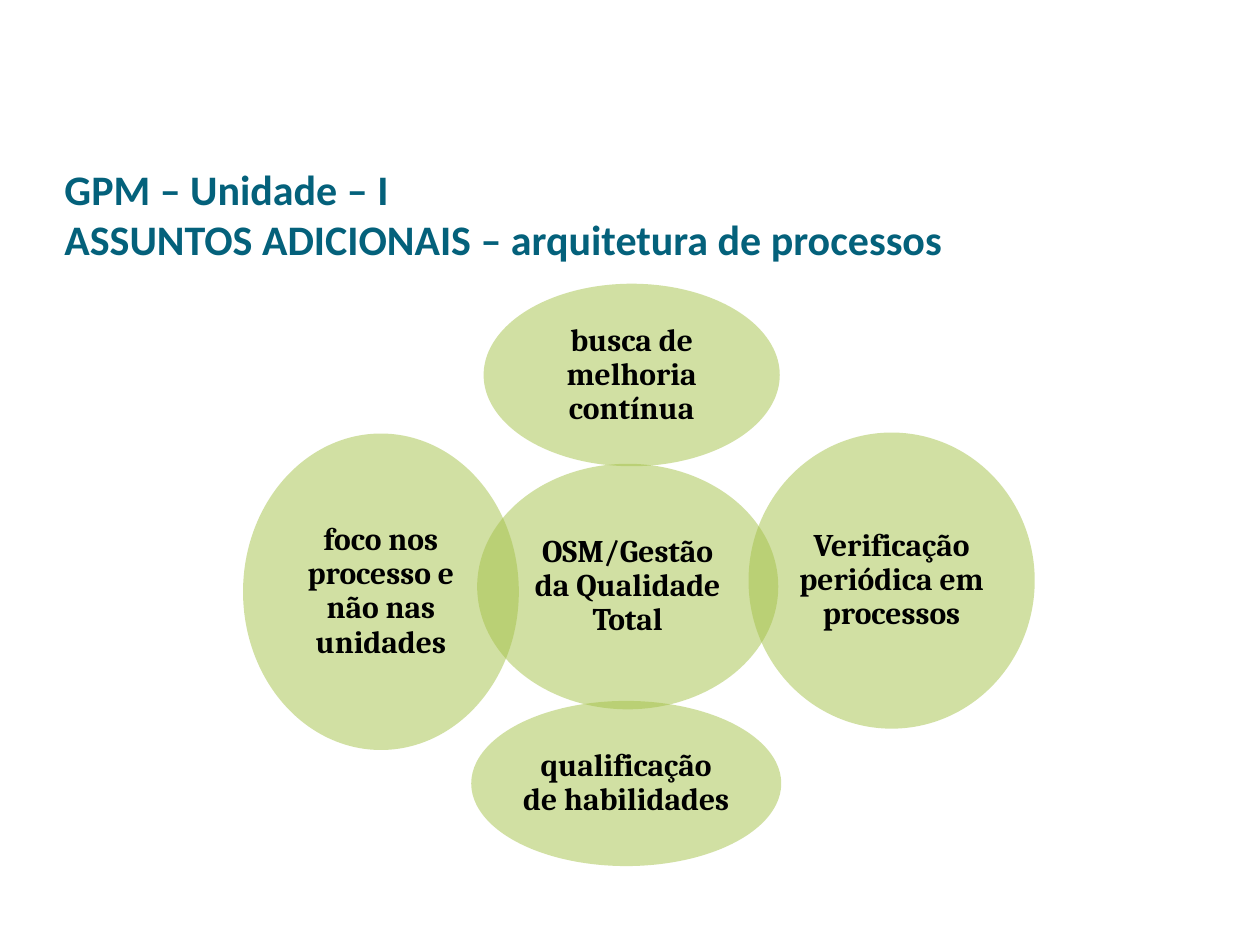
from lxml import etree
from pptx import Presentation
from pptx.dml.color import RGBColor
from pptx.enum.shapes import MSO_SHAPE
from pptx.enum.text import MSO_ANCHOR, MSO_AUTO_SIZE, PP_ALIGN
from pptx.oxml.ns import qn
from pptx.util import Cm, Pt

TEAL = RGBColor(0x04, 0x61, 0x7B)
GREEN = RGBColor(0xA5, 0xC2, 0x49)
BLACK = RGBColor(0, 0, 0)
OVAL = MSO_SHAPE.OVAL
LEFT, CENTER = PP_ALIGN.LEFT, PP_ALIGN.CENTER
MIDDLE, BOTTOM = MSO_ANCHOR.MIDDLE, MSO_ANCHOR.BOTTOM
NO_AUTOFIT = MSO_AUTO_SIZE.NONE

TITLE = "GPM – Unidade – I\vASSUNTOS ADICIONAIS – arquitetura de processos"
CIRCLES = [
    ("OSM/Gestão da Qualidade Total", 4.72, 3.63, 6.07, 4.95),
    ("busca de melhoria contínua", 4.85, 0, 5.97, 3.68),
    ("Verificação periódica em processos", 10.19, 3, 5.77, 5.97),
    ("qualificação de habilidades", 4.6, 8.41, 6.25, 3.33),
    ("foco nos processo e não nas unidades", 0, 3.02, 5.56, 6.38),
]


def format_frame(tf, anchor, side, edge):
    tf.word_wrap = True
    tf.auto_size = NO_AUTOFIT
    tf.vertical_anchor = anchor
    tf.margin_left = tf.margin_right = Cm(side)
    tf.margin_top, tf.margin_bottom = Cm(edge), Cm(side)


def format_paragraph(p, name, size, color, align):
    p.alignment = align
    p.font.name = name
    p.font.size = Pt(size)
    p.font.bold = True
    p.font.color.rgb = color


def set_title(s, left, top, width, height):
    title = s.shapes.title
    title.left, title.top = Cm(left), Cm(top)
    title.width, title.height = Cm(width), Cm(height)
    tf = title.text_frame
    tf.text = TITLE
    format_frame(tf, BOTTOM, 0, 0.13)
    p = tf.paragraphs[0]
    p.line_spacing = 1.0
    p.space_before = Pt(0)
    format_paragraph(p, "Calibri", 24, TEAL, LEFT)


def set_alpha(shape, percent):
    color = shape.fill._xPr.find(qn("a:solidFill"))[0]
    etree.SubElement(color, qn("a:alpha")).set("val", str(percent * 1000))


def add_circle(shapes, text, left, top, width, height):
    sp = shapes.add_shape(OVAL, Cm(left), Cm(top), Cm(width), Cm(height))
    sp.shadow.inherit = False
    sp.fill.solid()
    sp.fill.fore_color.rgb = GREEN
    set_alpha(sp, 50)
    sp.line.fill.background()
    tf = sp.text_frame
    tf.text = text
    format_frame(tf, MIDDLE, 0.08, 0.08)
    p = tf.paragraphs[0]
    p.line_spacing = 0.9
    format_paragraph(p, "Cambria", 18, BLACK, CENTER)


def add_radial_diagram(s, left, top):
    group = s.shapes.add_group_shape()
    for text, dx, dy, width, height in CIRCLES:
        add_circle(group.shapes, text, left + dx, top + dy, width, height)


def main():
    prs = Presentation()
    prs.slide_width, prs.slide_height = Cm(25.4), Cm(19.05)
    s = prs.slides.add_slide(prs.slide_layouts[5])
    set_title(s, 1.3, 3.53, 22.86, 1.8)
    add_radial_diagram(s, 4.9, 5.72)
    prs.save("out.pptx")


if __name__ == "__main__":
    main()
